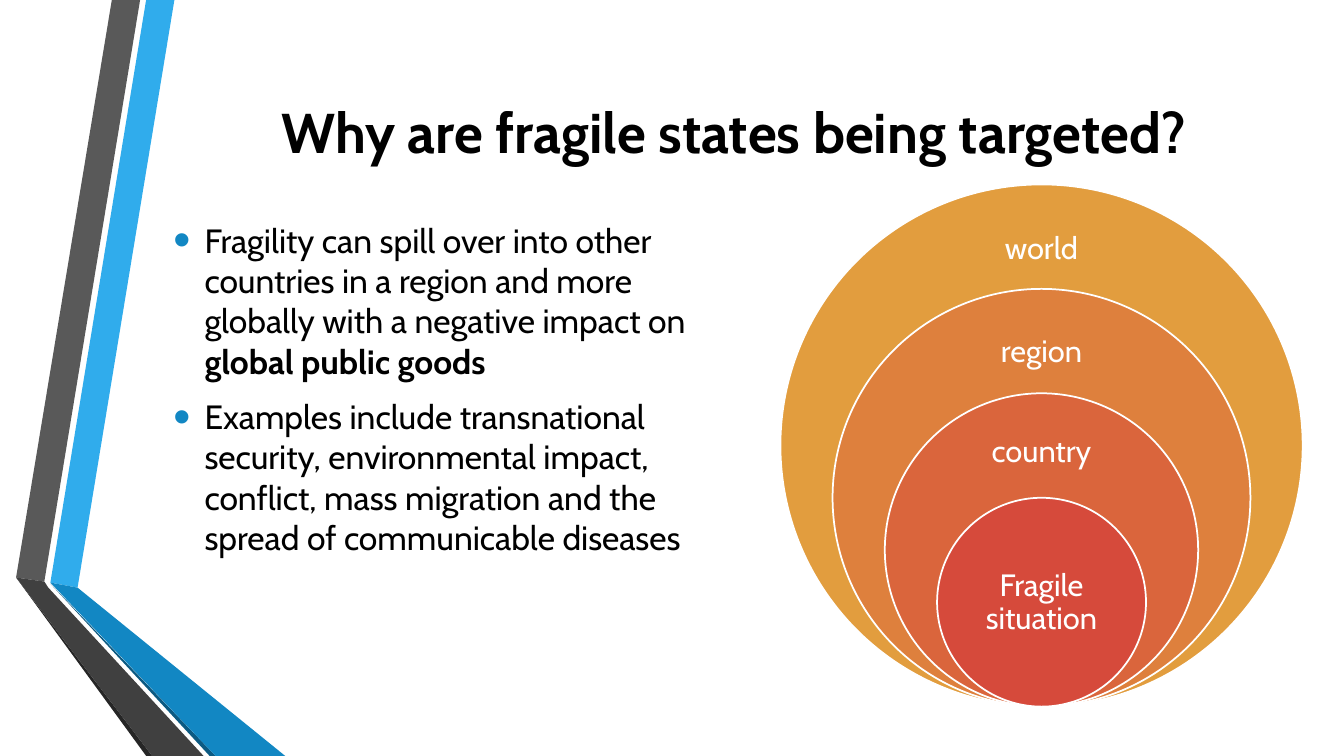
"""Build a slide on why fragile states are being targeted."""
from dataclasses import dataclass

from lxml import etree
from pptx import Presentation, util as u
from pptx.dml.color import RGBColor
from pptx.enum import shapes, text
from pptx.oxml.ns import qn


@dataclass(frozen=True)
class Theme:
    """Colours, font and type sizes of the slide."""
    font: str = "Cabin"
    title_size: int = 40
    body_size: int = 24
    label_size: int = 22
    ink: str = "000000"
    white: str = "FFFFFF"
    bullet: str = "1287C3"
    blue: str = "30ACEC"
    blue_fold: str = "1287C3"
    blue_edge: str = "0C5A82"
    grey: str = "595959"
    grey_fold: str = "404040"
    grey_edge: str = "262626"


THEME = Theme()

RIBBONS = [
    (THEME.blue, [(0.5, 5.78), (0.77, 5.83), (1.73, 0), (1.45, 0)]),
    (THEME.grey, [(1.39, 0), (1.11, 0), (0.16, 5.73), (0.44, 5.77)]),
    (THEME.grey_edge, [(0.16, 5.73), (1.45, 7.5), (1.51, 7.5)]),
    (THEME.blue_edge, [(0.5, 5.79), (2.08, 7.5), (2.14, 7.5)]),
    (THEME.blue_fold, [(0.5, 5.78), (2.14, 7.5), (2.83, 7.5), (0.77, 5.83)]),
    (THEME.grey_fold, [(2.02, 7.5), (0.48, 5.83), (0.44, 5.77), (0.16, 5.73), (1.51, 7.5)]),
]

BULLETS = [
    [("Fragility can spill over into other countries in a region and more "
      "globally with a negative impact on ", False),
     ("global public goods", True)],
    [("Examples include transnational security, environmental impact, conflict, "
      "mass migration and the spread of communicable diseases", False)],
]

RINGS = [
    ("world", "E29D3E", 2.48),
    ("region", "DE803D", 3.5),
    ("country", "DA653C", 4.49),
    ("Fragile situation", "D64A3B", 5.98),
]


def add_run(p, content, *, size, color=THEME.ink, bold=False):
    """Append formatted text to a paragraph."""
    r = p.add_run()
    r.text = content
    r.font.name = THEME.font
    r.font.size = u.Pt(size)
    r.font.bold = bold
    r.font.color.rgb = RGBColor.from_string(color)


def place(sp, left, top, width, height):
    """Set the position and size of a shape in inches."""
    sp.left, sp.top = u.Inches(left), u.Inches(top)
    sp.width, sp.height = u.Inches(width), u.Inches(height)


def set_frame(tf):
    """Make a text frame wrap and sit in the middle of its box."""
    tf.word_wrap = True
    tf.auto_size = text.MSO_AUTO_SIZE.NONE
    tf.vertical_anchor = text.MSO_ANCHOR.MIDDLE


def paint(sp, color, outline=None):
    """Fill a shape and give it an outline or none."""
    sp.shadow.inherit = False
    sp.fill.solid()
    sp.fill.fore_color.rgb = RGBColor.from_string(color)
    if outline:
        sp.line.color.rgb = RGBColor.from_string(outline)
        sp.line.width = u.Pt(1.25)
    else:
        sp.line.fill.background()


def add_ribbon(s, color, points):
    """Draw one closed band of the side ribbon."""
    corners = [(u.Inches(x), u.Inches(y)) for x, y in points]
    builder = s.shapes.build_freeform(*corners[0])
    builder.add_line_segments(corners[1:], close=True)
    paint(builder.convert_to_shape(), color)


def add_title(s, content):
    """Fill and place the title placeholder."""
    sp = s.shapes.title
    place(sp, 1.8, 0.34, 10.96, 1.92)
    set_frame(sp.text_frame)
    p = sp.text_frame.paragraphs[0]
    p.alignment = text.PP_ALIGN.CENTER
    add_run(p, content, size=THEME.title_size, bold=True)


def set_bullet(p, indent):
    """Give a paragraph a hanging, coloured bullet."""
    ppr = p._p.get_or_add_pPr()
    ppr.set("marL", str(u.Inches(indent)))
    ppr.set("indent", str(-u.Inches(indent)))
    color = etree.SubElement(ppr, qn("a:buClr"))
    etree.SubElement(color, qn("a:srgbClr"), val=THEME.bullet)
    etree.SubElement(ppr, qn("a:buSzPct"), val="145000")
    etree.SubElement(ppr, qn("a:buFont"), typeface="Arial")
    etree.SubElement(ppr, qn("a:buChar"), char="•")


def add_bullets(s, items):
    """Add the bulleted body text."""
    tf = s.shapes.add_textbox(*map(u.Inches, (1.62, 1.83, 5.51, 4.5))).text_frame
    set_frame(tf)
    tf.margin_bottom = u.Inches(0.5)
    for i, runs in enumerate(items):
        p = tf.add_paragraph() if i else tf.paragraphs[0]
        p.space_before, p.space_after = u.Pt(4.8), u.Pt(6)
        set_bullet(p, 0.31)
        for content, bold in runs:
            add_run(p, content, size=THEME.body_size, bold=bold)


def add_label(s, content, center_x, center_y):
    """Add a white label centred on a point."""
    width, height = 1.47, 1.04
    sp = s.shapes.add_textbox(0, 0, 0, 0)
    place(sp, center_x - width / 2, center_y - height / 2, width, height)
    tf = sp.text_frame
    set_frame(tf)
    tf.margin_left = tf.margin_right = u.Inches(0.17)
    tf.margin_top = tf.margin_bottom = u.Inches(0.17)
    p = tf.paragraphs[0]
    p.alignment = text.PP_ALIGN.CENTER
    p.line_spacing = 0.9
    add_run(p, content, size=THEME.label_size, color=THEME.white)


def add_rings(s, rings):
    """Draw nested circles that share their lowest point."""
    center_x, bottom, outer = 10.33, 7.01, 5.18
    for i, (content, color, label_y) in enumerate(rings):
        size = outer * (1 - 0.2 * i)
        sp = s.shapes.add_shape(shapes.MSO_SHAPE.OVAL, 0, 0, 0, 0)
        place(sp, center_x - size / 2, bottom - size, size, size)
        paint(sp, color, THEME.white)
        add_label(s, content, center_x, label_y)


def main():
    """Build and save the slide."""
    prs = Presentation()
    prs.slide_width, prs.slide_height = u.Inches(13.33), u.Inches(7.5)
    s = prs.slides.add_slide(prs.slide_layouts.get_by_name("Title Only"))
    for color, points in RIBBONS:
        add_ribbon(s, color, points)
    add_title(s, "Why are fragile states being targeted?")
    add_bullets(s, BULLETS)
    add_rings(s, RINGS)
    prs.save("out.pptx")


if __name__ == "__main__":
    main()
